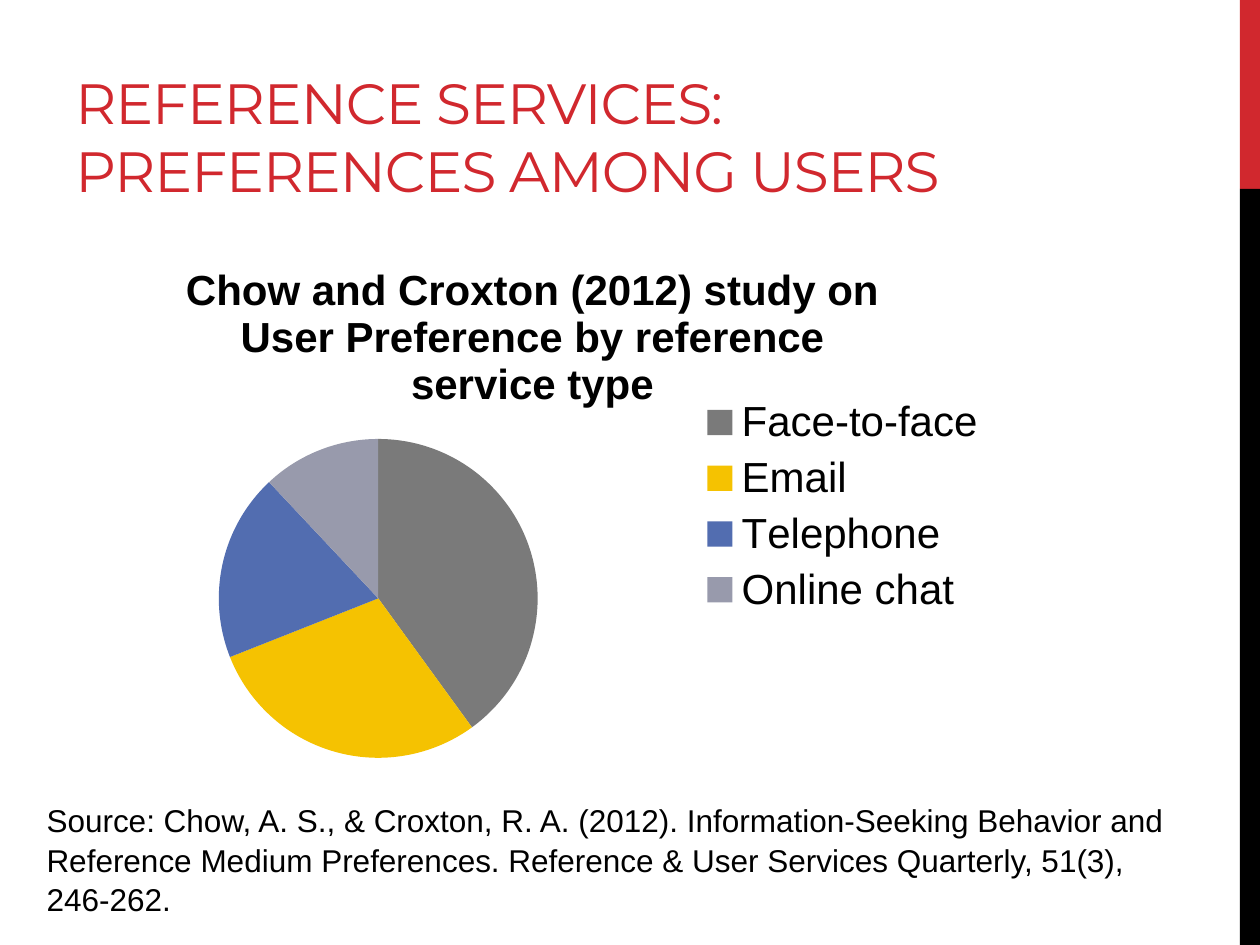
"""Build a slide with a pie chart of user preferences among reference services."""
from pptx import Presentation
from pptx.chart.data import CategoryChartData
from pptx.dml.color import RGBColor
from pptx.enum.chart import XL_CHART_TYPE, XL_LEGEND_POSITION
from pptx.enum.shapes import MSO_SHAPE
from pptx.enum.text import MSO_ANCHOR, MSO_AUTO_SIZE
from pptx.util import Pt

RED = RGBColor(0xD1, 0x28, 0x2E)
BLACK = RGBColor(0x00, 0x00, 0x00)
GRAY = RGBColor(0x7A, 0x7A, 0x7A)
YELLOW = RGBColor(0xF5, 0xC2, 0x01)
BLUE = RGBColor(0x52, 0x6D, 0xB0)
LAVENDER = RGBColor(0x98, 0x9A, 0xAC)

PREFERENCES = [
    ("Face-to-face", 40, GRAY),
    ("Email", 29, YELLOW),
    ("Telephone", 19, BLUE),
    ("Online chat", 12, LAVENDER),
]
CHART_TITLE = "Chow and Croxton (2012) study on User Preference by reference service type"
SOURCE = (
    "Source: Chow, A. S., & Croxton, R. A. (2012). Information-Seeking Behavior and "
    "Reference Medium Preferences. Reference & User Services Quarterly, 51(3), 246-262."
)


def set_font(font, name, size, color, bold=False):
    font.name = name
    font.size = Pt(size)
    font.color.rgb = color
    font.bold = bold


def add_bar(slide, top, height, color):
    shape = slide.shapes.add_shape(
        MSO_SHAPE.RECTANGLE, Pt(708.5), Pt(top), Pt(11.5), Pt(height)
    )
    shape.shadow.inherit = False
    shape.fill.solid()
    shape.fill.fore_color.rgb = color
    shape.line.fill.background()


def add_text(slide, box, text, font_name, size, color):
    shape = slide.shapes.add_textbox(*map(Pt, box))
    shape.text_frame.word_wrap = True
    paragraph = shape.text_frame.paragraphs[0]
    paragraph.text = text
    set_font(paragraph.font, font_name, size, color)
    return shape.text_frame


def add_title(slide, text):
    frame = add_text(slide, (36, 12.24, 600, 108), text, "Montserrat", 32.4, RED)
    frame.vertical_anchor = MSO_ANCHOR.BOTTOM
    run = frame.paragraphs[0].runs[0]
    run.font._element.set("spc", "-60")


def add_source(slide, text):
    frame = add_text(slide, (19.5, 453, 658, 72.7), text, "Arial", 18, BLACK)
    frame.auto_size = MSO_AUTO_SIZE.SHAPE_TO_FIT_TEXT
    frame.paragraphs[0].line_spacing = 1.05


def add_pie(slide, title, preferences):
    categories, values, colors = zip(*preferences)
    data = CategoryChartData()
    data.categories = categories
    data.add_series("Series 1", values)
    chart = slide.shapes.add_chart(
        XL_CHART_TYPE.PIE, Pt(36), Pt(135.5), Pt(536.5), Pt(307.5), data
    ).chart
    set_font(chart.font, "Arial", 18, BLACK)

    chart.has_title = True
    chart.chart_title.include_in_layout = False
    paragraph = chart.chart_title.text_frame.paragraphs[0]
    paragraph.text = title
    set_font(paragraph.font, "Arial", 24, BLACK, bold=True)

    chart.has_legend = True
    chart.legend.position = XL_LEGEND_POSITION.RIGHT
    chart.legend.include_in_layout = False
    set_font(chart.legend.font, "Arial", 24, BLACK)

    plot = chart.plots[0]
    plot.vary_by_categories = True
    for index, color in enumerate(colors):
        fill = plot.series[0].points[index].format.fill
        fill.solid()
        fill.fore_color.rgb = color


def main():
    presentation = Presentation()
    presentation.slide_width = Pt(720)
    presentation.slide_height = Pt(540)
    slide = presentation.slides.add_slide(presentation.slide_layouts[6])
    add_bar(slide, 0, 108, RED)
    add_bar(slide, 108, 432, BLACK)
    add_title(slide, "REFERENCE SERVICES: PREFERENCES AMONG USERS")
    add_pie(slide, CHART_TITLE, PREFERENCES)
    add_source(slide, SOURCE)
    presentation.save("out.pptx")


if __name__ == "__main__":
    main()
